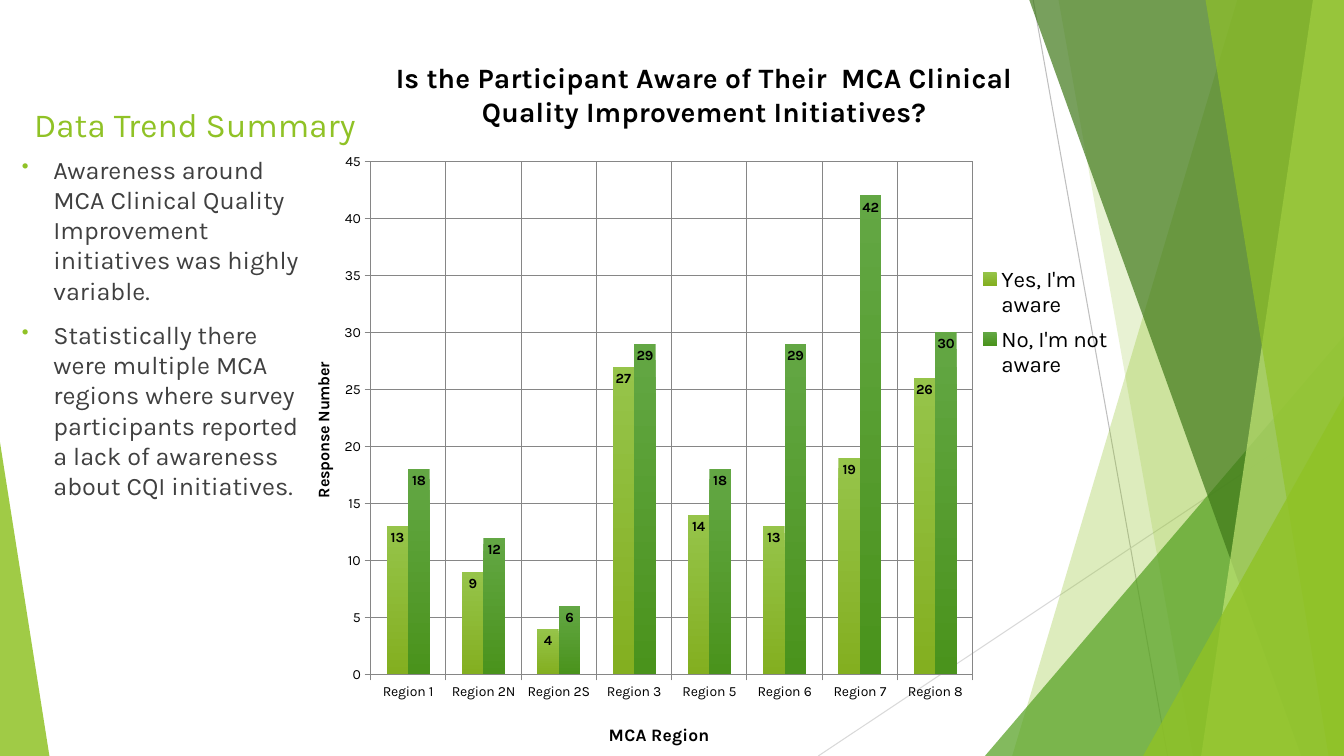
import pptx
import pptx.chart.data
import pptx.dml.color
import pptx.enum.chart
import pptx.enum.shapes
import pptx.enum.text
import pptx.oxml
import pptx.oxml.ns
import pptx.util

Pt = pptx.util.Pt
CHART_NS = pptx.oxml.ns.nsdecls("c")
LIME, GREEN, BLACK = "90C226", "54A021", "000000"


def paint(fill, colour, opacity=100):
    fill.solid()
    fill.fore_color.rgb = pptx.dml.color.RGBColor.from_string(colour)
    if opacity < 100:
        alpha = pptx.oxml.parse_xml(
            f'<a:alpha {pptx.oxml.ns.nsdecls("a")} val="{opacity * 1000}"/>')
        fill._xPr.xpath("a:solidFill/a:srgbClr")[0].append(alpha)


def set_layout(parent, index, target="", **fractions):
    for layout in parent.xpath("c:layout"):
        parent.remove(layout)
    modes = "".join(f'<c:{axis}Mode val="edge"/>' for axis in "xy")
    values = "".join(f'<c:{name} val="{value}"/>' for name, value in fractions.items())
    parent.insert(index, pptx.oxml.parse_xml(
        f"<c:layout {CHART_NS}><c:manualLayout>{target}{modes}{values}"
        "</c:manualLayout></c:layout>"))


presentation = pptx.Presentation()
presentation.slide_width, presentation.slide_height = Pt(960), Pt(540)
slide = presentation.slides.add_slide(presentation.slide_layouts[6])
shapes = slide.shapes

# Thin background lines
for x1, y1, x2, y2, colour in [(738, 0, 834, 540, "BFBFBF"),
                               (960, 290, 584.5, 540, "D9D9D9")]:
    line = shapes.add_connector(pptx.enum.shapes.MSO_CONNECTOR.STRAIGHT,
                                Pt(x1), Pt(y1), Pt(x2), Pt(y2))
    line.line.width = Pt(0.75)
    paint(line.line.fill, colour)
    line._element.spPr.append(pptx.oxml.parse_xml(
        f'<a:effectLst {pptx.oxml.ns.nsdecls("a")}/>'))

# Translucent facets: a band is (top x, bottom x), a triangle is (left, top, width, height)
facets = [
    ((884, 723), LIME, 30),
    ((756, 852), LIME, 20),
    ((703.5, 240, 256.5, 300), GREEN, 72),
    ((735, 929.5), "3F7819", 70),
    ((938, 858), "C0E474", 70),
    ((861, 949), LIME, 65),
    ((816.5, 283, 143.5, 257), LIME, 80),
    ((0, 316, 35.3, 224), LIME, 85),
]
for geometry, colour, opacity in facets:
    if len(geometry) == 2:
        top_x, bottom_x = geometry
        builder = shapes.build_freeform(Pt(top_x), Pt(-0.7))
        builder.add_line_segments([(Pt(960), Pt(-0.7)), (Pt(960), Pt(540)),
                                   (Pt(bottom_x), Pt(540))])
        shape = builder.convert_to_shape()
    else:
        shape = shapes.add_shape(pptx.enum.shapes.MSO_SHAPE.ISOSCELES_TRIANGLE,
                                 *[Pt(length) for length in geometry])
        shape.adjustments[0] = 1 if geometry[0] > 0 else 0
    shape.shadow.inherit = False
    shape.line.fill.background()
    paint(shape.fill, colour, opacity)

# Heading
heading = shapes.add_textbox(Pt(17.3), Pt(24.5), Pt(282), Pt(82))
heading.text_frame.word_wrap = True
heading.text_frame.vertical_anchor = pptx.enum.text.MSO_ANCHOR.BOTTOM
heading.text_frame.text = "Data Trend Summary"
heading_font = heading.text_frame.paragraphs[0].runs[0].font
heading_font.name, heading_font.size = "Karla", Pt(24)
paint(heading_font.fill, LIME)

# Chart
chart_data = pptx.chart.data.CategoryChartData()
chart_data.categories = ["Region 1", "Region 2N", "Region 2S", "Region 3",
                         "Region 5", "Region 6", "Region 7", "Region 8"]
chart_data.add_series("Yes, I'm aware", [13, 9, 4, 27, 14, 13, 19, 26])
chart_data.add_series("No, I'm not aware", [18, 12, 6, 29, 18, 29, 42, 30])
chart = shapes.add_chart(pptx.enum.chart.XL_CHART_TYPE.COLUMN_CLUSTERED,
                         Pt(209.5), Pt(24.5), Pt(587), Pt(515.5), chart_data).chart
chart.font.name, chart.font.size = "Karla", Pt(10)
paint(chart.font.fill, BLACK)

# Axes
value_axis, category_axis = chart.value_axis, chart.category_axis
value_axis.minimum_scale, value_axis.maximum_scale = 0, 45
value_axis.major_unit = 5
for axis in (value_axis, category_axis):
    axis.has_major_gridlines = True
    axis.major_tick_mark = pptx.enum.chart.XL_TICK_MARK.OUTSIDE
    for line in (axis.format.line, axis.major_gridlines.format.line):
        line.width = Pt(0.75)
        paint(line.fill, "868686")

# Chart and axis titles
chart.has_title = True
titles = [
    (chart.chart_title,
     "Is the Participant Aware of Their  MCA Clinical Quality Improvement Initiatives?", 20),
    (category_axis.axis_title, "MCA Region", 12.5),
    (value_axis.axis_title, "Response Number", 11.5),
]
for title, text, size in titles:
    title.text_frame.text = text
    font = title.text_frame.paragraphs[0].runs[0].font
    font.name, font.size, font.bold = "Karla", Pt(size), True
    paint(font.fill, BLACK)
chart.chart_title.include_in_layout = False

# Legend
chart.has_legend = True
chart.legend.position = pptx.enum.chart.XL_LEGEND_POSITION.RIGHT
chart.legend.include_in_layout = False
chart.legend.font.name, chart.legend.font.size = "Karla", Pt(16)
paint(chart.legend.font.fill, BLACK)

# Placement inside the chart
plot_area = chart._chartSpace.xpath("c:chart/c:plotArea")[0]
value_title = plot_area.xpath("c:valAx/c:title")[0]
value_body = value_title.xpath("c:tx/c:rich/a:bodyPr")[0]
value_body.set("rot", "-5400000")
value_body.set("vert", "horz")
set_layout(plot_area, 0, '<c:layoutTarget val="inner"/>', x=0.094, y=0.176, w=0.733, h=0.711)
set_layout(plot_area.xpath("c:catAx/c:title")[0], 1, x=0.38, y=0.95)
set_layout(value_title, 1, x=0.02, y=0.45)
set_layout(chart._chartSpace.xpath("c:chart/c:legend")[0], 1, x=0.83, y=0.31, w=0.17, h=0.18)

# Columns with value labels
plot = chart.plots[0]
plot.gap_width, plot.overlap, plot.vary_by_categories = 150, 0, False
gradients = [("96C44A", "83AF20"), ("63A744", "4A931C")]
for series, gradient in zip(plot.series, gradients):
    fill = series.format.fill
    fill.gradient()
    fill.gradient_angle = 270
    for stop, colour in zip(fill.gradient_stops, gradient):
        stop.color.rgb = pptx.dml.color.RGBColor.from_string(colour)
    series.invert_if_negative = False
    labels = series.data_labels
    labels.show_value = True
    labels.position = pptx.enum.chart.XL_LABEL_POSITION.INSIDE_END
    labels.font.name, labels.font.size, labels.font.bold = "Karla", Pt(10), True
    paint(labels.font.fill, BLACK)

# Bulleted findings
findings = [
    "Awareness around MCA Clinical Quality Improvement initiatives was highly variable.",
    "Statistically there were multiple MCA regions where survey participants reported "
    "a lack of awareness about CQI initiatives.",
]
body = shapes.add_textbox(Pt(8.6), Pt(106.5), Pt(222), Pt(287))
body.text_frame.word_wrap = True
body.text_frame.text = "\n".join(findings)
for paragraph in body.text_frame.paragraphs:
    paragraph.space_before = Pt(10)
    font = paragraph.runs[0].font
    font.name, font.size = "Karla", Pt(18)
    paint(font.fill, "404040")
    properties = paragraph._p.get_or_add_pPr()
    properties.set("marL", str(Pt(22.5)))
    properties.set("indent", str(Pt(-22.5)))
    for bullet in (f'buClr {{}}><a:srgbClr val="{LIME}"/></a:buClr>',
                   'buSzPct {} val="80000"/>', 'buChar {} char="•"/>'):
        properties.append(pptx.oxml.parse_xml(
            "<a:" + bullet.format(pptx.oxml.ns.nsdecls("a"))))

presentation.save("out.pptx")
